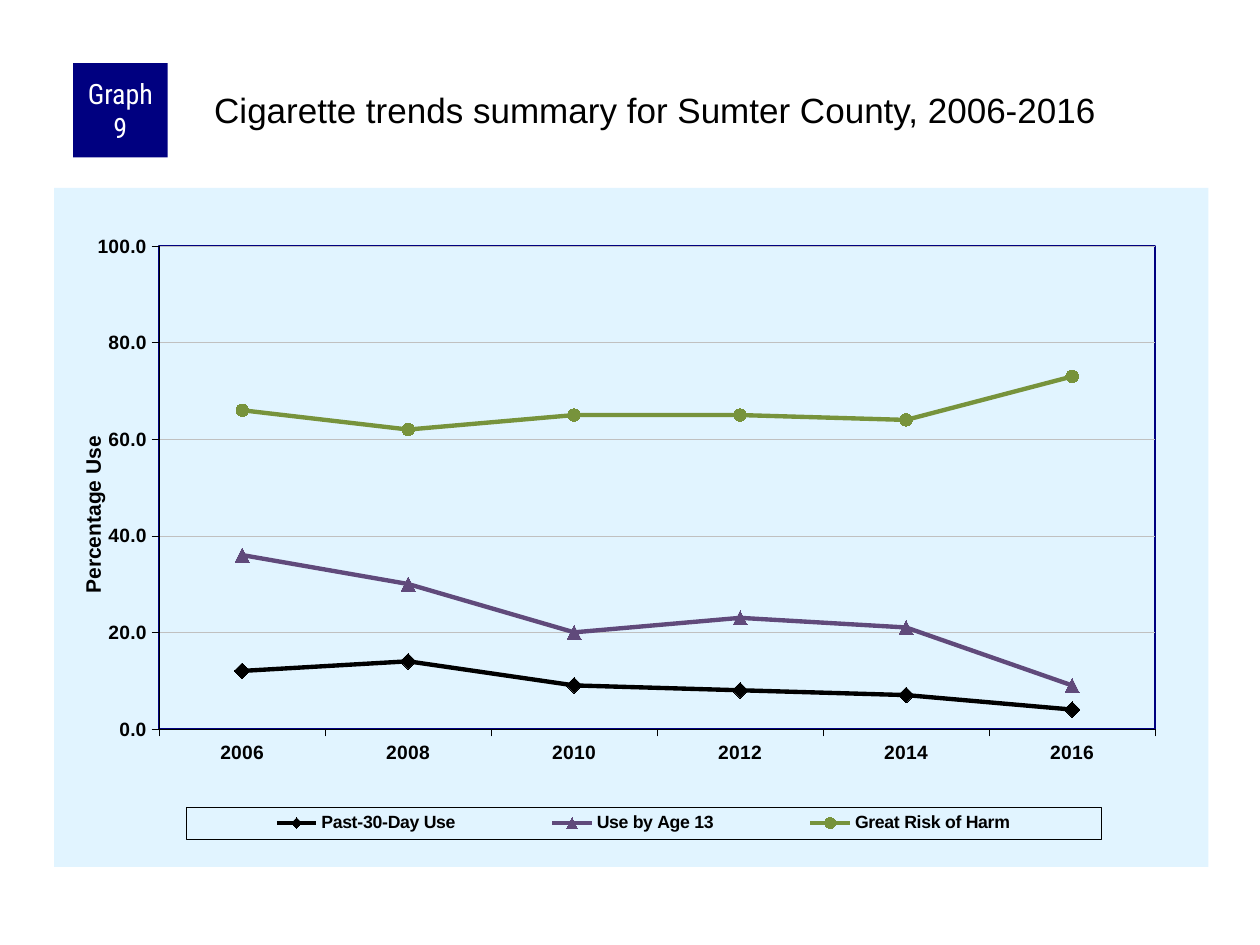
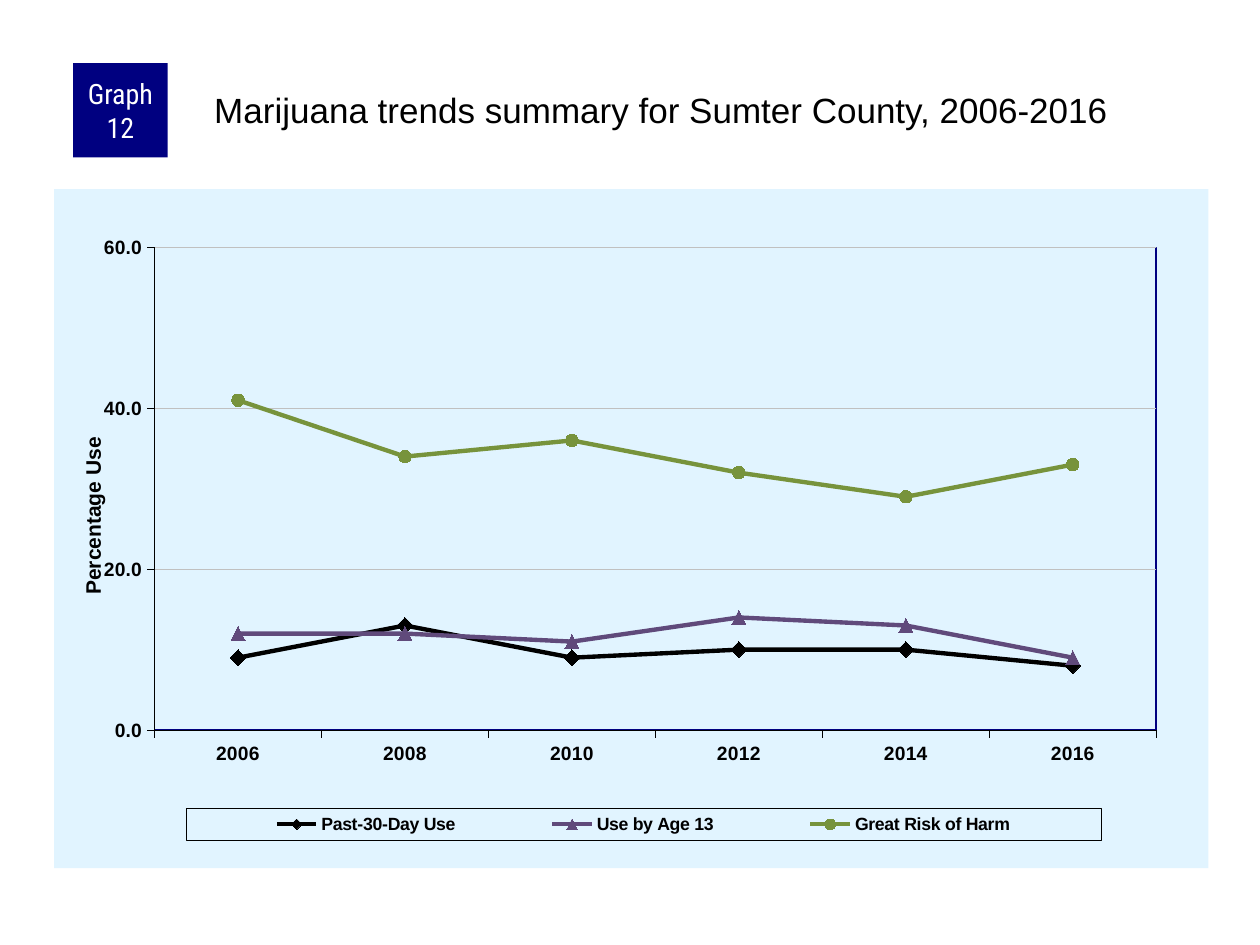
from lxml.etree import fromstring
from pptx import Presentation
from pptx.chart.data import CategoryChartData
from pptx.dml.color import RGBColor
from pptx.enum.chart import XL_CHART_TYPE, XL_LEGEND_POSITION, XL_MARKER_STYLE, XL_TICK_MARK
from pptx.enum.shapes import MSO_SHAPE
from pptx.enum.text import MSO_ANCHOR, MSO_AUTO_SIZE, PP_ALIGN
from pptx.oxml.ns import nsdecls, qn
from pptx.util import Inches, Pt

YEARS = ["2006", "2008", "2010", "2012", "2014", "2016"]
GRAPHS = [
    {
        "badge": "Graph 9",
        "title": "Cigarette trends summary for Sumter County, 2006-2016",
        "top": 1.49,
        "maximum": 100,
        "plot": (0.091, 0.086, 0.863, 0.711),
        "values": {
            "Past-30-Day Use": (12, 14, 9, 8, 7, 4),
            "Use by Age 13": (36, 30, 20, 23, 21, 9),
            "Great Risk of Harm": (66, 62, 65, 65, 64, 73),
        },
    },
    {
        "badge": "Graph 12",
        "title": "Marijuana trends summary for Sumter County, 2006-2016",
        "top": 1.5,
        "maximum": 60,
        "plot": (0.087, 0.086, 0.868, 0.711),
        "values": {
            "Past-30-Day Use": (9, 13, 9, 10, 10, 8),
            "Use by Age 13": (12, 12, 11, 14, 13, 9),
            "Great Risk of Harm": (41, 34, 36, 32, 29, 33),
        },
    },
]
SERIES_STYLES = [
    ("000000", XL_MARKER_STYLE.DIAMOND, 9),
    ("604A7B", XL_MARKER_STYLE.TRIANGLE, 8),
    ("77933C", XL_MARKER_STYLE.CIRCLE, 7),
]
NAVY, BLACK, WHITE, GRID, PANEL = "000080", "000000", "FFFFFF", "C0C0C0", "E1F4FF"
LEGEND_BOX = (0.114, 0.912, 0.793, 0.047)
AXIS_TITLE_CORNER = (0.019, 0.36)


def color(value):
    return RGBColor.from_string(value)


def style_font(font, size, value=BLACK, name="Arial", bold=False):
    font.name, font.size, font.bold = name, Pt(size), bold
    font.color.rgb = color(value)


def style_line(line, value, width):
    line.color.rgb = color(value)
    line.width = Pt(width)


def set_layout(element, index, box, inner=False):
    """Place a chart part by fractions of the chart: x, y and perhaps width, height."""
    for layout in element.findall(qn("c:layout")):
        element.remove(layout)
    target = '<c:layoutTarget val="inner"/>' if inner else ""
    names = ("x", "y", "w", "h")[:len(box)]
    modes = "".join(f'<c:{name}Mode val="edge"/>' for name in names[:2])
    sizes = "".join(f'<c:{name} val="{value}"/>' for name, value in zip(names, box))
    element.insert(index, fromstring(
        f'<c:layout {nsdecls("c")}><c:manualLayout>{target}{modes}{sizes}'
        '</c:manualLayout></c:layout>'))


def area_format(fill=None, line=None, width=1.0):
    def paint(value):
        if value is None:
            return "<a:noFill/>"
        return f'<a:solidFill><a:srgbClr val="{value}"/></a:solidFill>'
    return fromstring(f'<c:spPr {nsdecls("c", "a")}>{paint(fill)}'
                      f'<a:ln w="{int(Pt(width))}">{paint(line)}</a:ln></c:spPr>')


def add_badge(slide, text):
    badge = slide.shapes.add_shape(
        MSO_SHAPE.RECTANGLE, Inches(0.58), Inches(0.5), Inches(0.75), Inches(0.75))
    badge.shadow.inherit = False
    badge.fill.solid()
    badge.fill.fore_color.rgb = color(NAVY)
    badge.line.fill.background()
    frame = badge.text_frame
    frame.word_wrap = True
    frame.vertical_anchor = MSO_ANCHOR.MIDDLE
    frame.margin_left = frame.margin_right = Inches(0.05)
    frame.margin_top = frame.margin_bottom = 0
    paragraph = frame.paragraphs[0]
    paragraph.alignment = PP_ALIGN.CENTER
    run = paragraph.add_run()
    run.text = text
    style_font(run.font, 16, WHITE, "Roboto Condensed")


def set_title(slide, text):
    title = slide.shapes.title
    title.left, title.top = Inches(1.67), Inches(0.67)
    title.width, title.height = Inches(7.92), Inches(0.83)
    frame = title.text_frame
    frame.auto_size = MSO_AUTO_SIZE.NONE
    frame.vertical_anchor = MSO_ANCHOR.TOP
    frame.margin_left = frame.margin_top = Inches(0.03)
    frame.margin_right = frame.margin_bottom = 0
    paragraph = frame.paragraphs[0]
    paragraph.alignment = PP_ALIGN.LEFT
    run = paragraph.add_run()
    run.text = text
    style_font(run.font, 20)


def style_axes(chart, maximum):
    for axis in (chart.category_axis, chart.value_axis):
        axis.major_tick_mark = XL_TICK_MARK.OUTSIDE
        axis.minor_tick_mark = XL_TICK_MARK.NONE
        style_font(axis.tick_labels.font, 11, bold=True)
        style_line(axis.format.line, BLACK, 0.25)
    value_axis = chart.value_axis
    value_axis.minimum_scale, value_axis.maximum_scale = 0, maximum
    value_axis.major_unit = 20
    value_axis.tick_labels.number_format = "0.0"
    value_axis.tick_labels.number_format_is_linked = False
    style_line(value_axis.major_gridlines.format.line, GRID, 0.25)
    run = value_axis.axis_title.text_frame.paragraphs[0].add_run()
    run.text = "Percentage Use"
    style_font(run.font, 12, bold=True)
    set_layout(chart.element.xpath("//c:valAx/c:title")[0], 1, AXIS_TITLE_CORNER)


def style_series(chart):
    for series, (value, marker, size) in zip(chart.plots[0].series, SERIES_STYLES):
        series.smooth = False
        style_line(series.format.line, value, 2.5)
        series.marker.style, series.marker.size = marker, size
        series.marker.format.fill.solid()
        series.marker.format.fill.fore_color.rgb = color(value)
        style_line(series.marker.format.line, value, 0.75)


def add_legend(chart):
    chart.has_legend = True
    chart.legend.position = XL_LEGEND_POSITION.RIGHT
    chart.legend.include_in_layout = False
    style_font(chart.legend.font, 10.1, bold=True)
    legend = chart.element.xpath("//c:legend")[0]
    set_layout(legend, 1, LEGEND_BOX)
    legend.find(qn("c:overlay")).addnext(area_format(line=BLACK, width=0.25))


def add_trend_chart(slide, graph):
    data = CategoryChartData(number_format="0.0")
    data.categories = YEARS
    for name, values in graph["values"].items():
        data.add_series(name, values)
    chart = slide.shapes.add_chart(
        XL_CHART_TYPE.LINE_MARKERS, Inches(0.43), Inches(graph["top"]),
        Inches(9.16), Inches(5.39), data).chart
    chart.has_title = False
    chart.plots[0].vary_by_categories = False
    style_font(chart.font, 8)
    style_axes(chart, graph["maximum"])
    style_series(chart)
    add_legend(chart)
    plot_area = chart.element.xpath("//c:plotArea")[0]
    set_layout(plot_area, 0, graph["plot"], inner=True)
    plot_area.append(area_format(line=NAVY))
    chart.element.find(qn("c:chart")).addnext(area_format(fill=PANEL))


def main():
    presentation = Presentation()
    presentation.slide_width, presentation.slide_height = Inches(10), Inches(7.5)
    title_only = presentation.slide_layouts[5]
    for graph in GRAPHS:
        slide = presentation.slides.add_slide(title_only)
        add_badge(slide, graph["badge"])
        set_title(slide, graph["title"])
        add_trend_chart(slide, graph)
    presentation.save("out.pptx")


if __name__ == "__main__":
    main()
